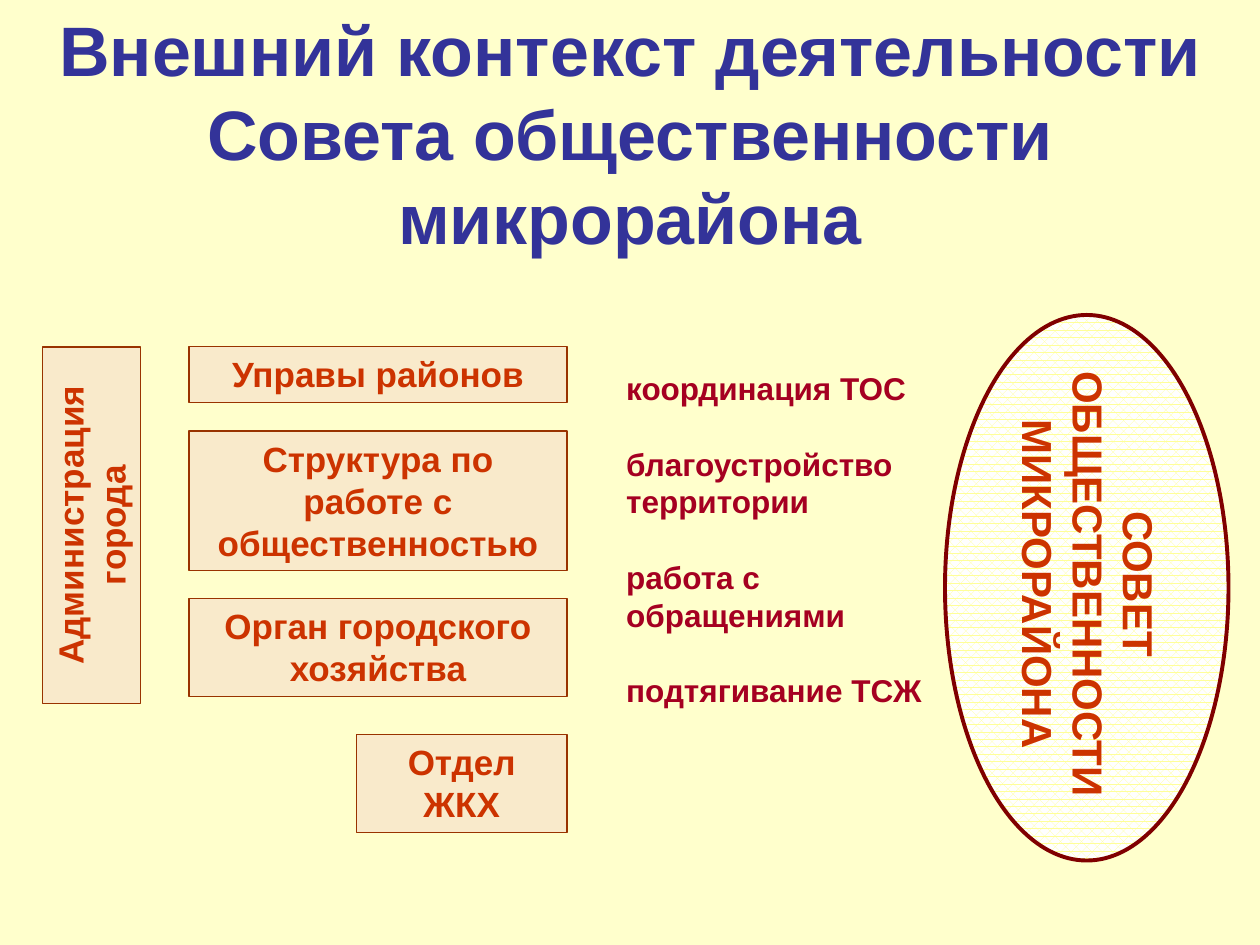
from pptx import Presentation
from pptx import util as u
from pptx.dml.color import RGBColor
from pptx.enum import dml, shapes, text

CREAM = RGBColor(0xFF, 0xFF, 0xCC)
YELLOW = RGBColor(0xFF, 0xFF, 0x99)
WHITE = RGBColor(0xFF, 0xFF, 0xFF)
INDIGO = RGBColor(0x33, 0x33, 0x99)
ORANGE = RGBColor(0xCC, 0x33, 0x00)
CRIMSON = RGBColor(0xA5, 0x00, 0x21)
MAROON = RGBColor(0x80, 0x00, 0x00)
BROWN = RGBColor(0x99, 0x33, 0x00)
PEACH = RGBColor(0xF9, 0xEA, 0xCB)
LEADING = 1.2


def write(box, lines, size, color, align=text.PP_ALIGN.CENTER, gap=0):
    """Fill a box with bold paragraphs separated by the given gap in points."""
    frame = box.text_frame
    frame.word_wrap = True
    frame.vertical_anchor = text.MSO_ANCHOR.TOP
    for index, line in enumerate(lines):
        para = frame.add_paragraph() if index else frame.paragraphs[0]
        para.alignment = align
        para.line_spacing = u.Pt(size * LEADING)
        para.space_before = u.Pt(gap if index else 0)
        span = para.add_run()
        span.text = line
        span.font.name = "Arial"
        span.font.size = u.Pt(size)
        span.font.bold = True
        span.font.color.rgb = color


def add_outlined(page, kind, area, line_color, line_width):
    """Add a preset shape with a plain outline and no shadow."""
    shape = page.shapes.add_shape(kind, *map(u.Inches, area))
    shape.shadow.inherit = False
    shape.line.color.rgb = line_color
    shape.line.width = u.Pt(line_width)
    return shape


def add_title(page, left, top, width, height):
    """Place the heading in the given box."""
    box = page.shapes.add_textbox(*map(u.Inches, (left, top, width, height)))
    write(box, ["Внешний контекст деятельности Совета общественности микрорайона"], 40, INDIGO)


def add_office(page, label, left, top, width, line_count, rotation=0):
    """Place one office box, as tall as its number of text lines needs."""
    area = (left, top, width, 0.11 + line_count / 3)
    office = add_outlined(page, shapes.MSO_SHAPE.RECTANGLE, area, BROWN, 0.75)
    office.fill.solid()
    office.fill.fore_color.rgb = PEACH
    office.rotation = rotation
    write(office, [label], 20, ORANGE)


def add_administration(page, left, top):
    """Place the upright city administration box and the offices beside it."""
    add_office(page, "Администрация города", left - 1.02, top + 1.03, 2.83, 2, 270)
    column, width = left + 1.17, 3
    add_office(page, "Управы районов", column, top, width, 1)
    add_office(page, "Структура по работе с общественностью", column, top + 0.67, width, 3)
    add_office(page, "Орган городского хозяйства", column, top + 2, width, 2)
    add_office(page, "Отдел ЖКХ", column + 1.33, top + 3.08, width - 1.33, 2)


def add_tasks(page, left, top, width, height):
    """Place the list of shared tasks."""
    box = page.shapes.add_textbox(*map(u.Inches, (left, top, width, height)))
    box.text_frame.margin_left = u.Inches(0.3)
    tasks = ["координация ТОС", "благоустройство территории",
             "работа с обращениями", "подтягивание ТСЖ"]
    write(box, tasks, 18, CRIMSON, text.PP_ALIGN.LEFT, 18 * LEADING)


def add_council(page, left, top, width, height):
    """Place the council ellipse with its label turned a quarter clockwise."""
    ellipse = add_outlined(page, shapes.MSO_SHAPE.OVAL, (left, top, width, height), MAROON, 2.25)
    ellipse.fill.patterned()
    ellipse.fill.pattern = dml.MSO_PATTERN.PERCENT_60
    ellipse.fill.fore_color.rgb = YELLOW
    ellipse.fill.back_color.rgb = WHITE
    length, depth = 4.08, 1.3
    area = (left + (width - length) / 2 + 0.02, top + (height - depth) / 2 - 0.03, length, depth)
    label = page.shapes.add_textbox(*map(u.Inches, area))
    label.rotation = 90
    write(label, ["СОВЕТ ОБЩЕСТВЕННОСТИ МИКРОРАЙОНА"], 24, ORANGE)


def main():
    """Build the slide and save the deck."""
    deck = Presentation()
    deck.slide_width, deck.slide_height = u.Inches(10), u.Inches(7.5)
    page = deck.slides.add_slide(deck.slide_layouts[6])
    page.background.fill.solid()
    page.background.fill.fore_color.rgb = CREAM
    add_council(page, 7.5, 2.5, 2.25, 4.33)
    add_title(page, 0, 0, 10, 2.1)
    add_administration(page, 0.33, 2.75)
    add_tasks(page, 4.67, 2.88, 3, 2.8)
    deck.save("out.pptx")


if __name__ == "__main__":
    main()
